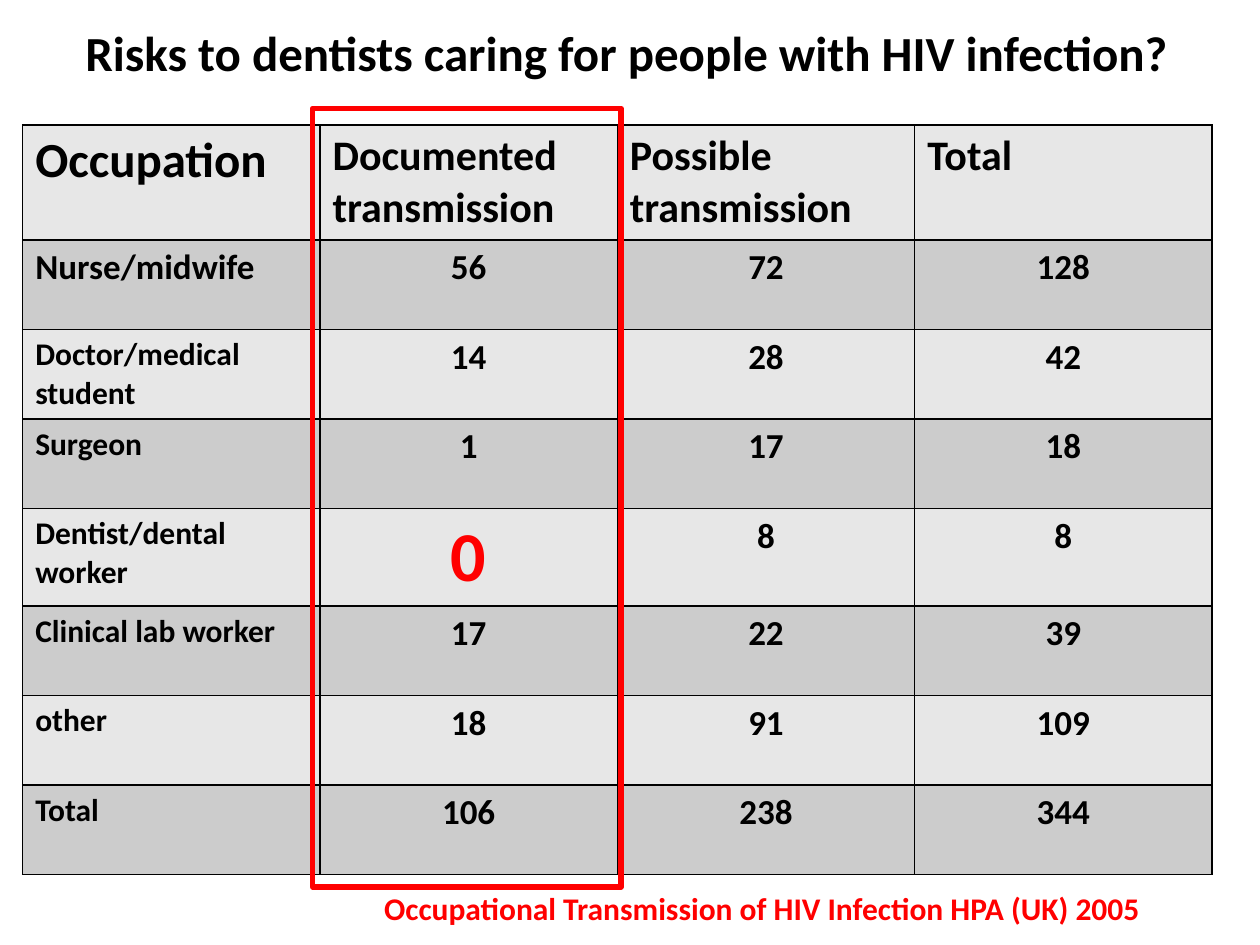
"""Build a slide tabulating occupational HIV transmission by occupation."""
import pptx
import pptx.dml.color
import pptx.enum.shapes
import pptx.enum.text
import pptx.oxml
import pptx.oxml.ns
import pptx.util
from pptx.util import Inches

TITLE = "Risks to dentists caring for people with HIV infection?"
SOURCE = "Occupational Transmission of HIV Infection HPA (UK) 2005"
HEADINGS = ["Occupation", "Documented transmission", "Possible transmission", "Total"]
COUNTS = [
    ("Nurse/midwife", 56, 72, 128),
    ("Doctor/medical student", 14, 28, 42),
    ("Surgeon", 1, 17, 18),
    ("Dentist/dental worker", 0, 8, 8),
    ("Clinical lab worker", 17, 22, 39),
    ("other", 18, 91, 109),
    ("Total", 106, 238, 344),
]
BANDS = ["E7E7E7", "CCCCCC"]
BLACK, RED = "000000", "FF0000"
COLUMN_WIDTH, ROW_HEIGHT = 2.36, 0.71
ALIGN = pptx.enum.text.PP_ALIGN


def rgb(value):
    """Turn a hex string into a colour."""
    return pptx.dml.color.RGBColor.from_string(value)


def write(frame, text, size, color=BLACK, align=ALIGN.LEFT):
    """Write one bold paragraph into a text frame."""
    frame.text = text
    paragraph = frame.paragraphs[0]
    paragraph.alignment = align
    font = paragraph.runs[0].font
    font.name, font.size, font.bold = "Calibri", pptx.util.Pt(size), True
    font.color.rgb = rgb(color)


def border(cell):
    """Rule all four sides of a cell with a thin black line."""
    properties = cell._tc.get_or_add_tcPr()
    for position, side in enumerate(("lnL", "lnR", "lnT", "lnB")):
        properties.insert(position, pptx.oxml.parse_xml(
            f'<a:{side} {pptx.oxml.ns.nsdecls("a")} w="12700"><a:solidFill>'
            f'<a:srgbClr val="{BLACK}"/></a:solidFill></a:{side}>'))


def cell_style(row, column, value):
    """Return the size, colour and alignment for a table value."""
    if row == 0:
        return (24 if column else 28), BLACK, ALIGN.LEFT
    if column == 0:
        return (20 if row == 1 else 18), BLACK, ALIGN.LEFT
    if value == 0:
        return 40, RED, ALIGN.CENTER
    return 20, BLACK, ALIGN.CENTER


def add_counts(slide):
    """Add the banded table of transmissions."""
    rows = [HEADINGS, *COUNTS]
    table = slide.shapes.add_table(
        len(rows), len(HEADINGS), Inches(0.18), Inches(0.99),
        Inches(COLUMN_WIDTH * len(HEADINGS)), Inches(ROW_HEIGHT * len(rows))).table
    for column in table.columns:
        column.width = Inches(COLUMN_WIDTH)
    for r, values in enumerate(rows):
        table.rows[r].height = Inches(ROW_HEIGHT)
        for c, value in enumerate(values):
            cell = table.cell(r, c)
            write(cell.text_frame, str(value), *cell_style(r, c, value))
            cell.fill.solid()
            cell.fill.fore_color.rgb = rgb(BANDS[r % 2])
            border(cell)


def main():
    """Assemble and save the slide."""
    deck = pptx.Presentation()
    deck.slide_width, deck.slide_height = Inches(10), Inches(7.5)
    slide = deck.slides.add_slide(deck.slide_layouts[5])

    title = slide.shapes.title
    title.left, title.top = Inches(0.05), Inches(0.03)
    title.width, title.height = Inches(9.84), Inches(0.77)
    write(title.text_frame, TITLE, 28, align=ALIGN.CENTER)
    title.text_frame.vertical_anchor = pptx.enum.text.MSO_ANCHOR.MIDDLE

    add_counts(slide)

    source = slide.shapes.add_textbox(Inches(2.95), Inches(7.01), Inches(6.76), Inches(0.4))
    source.text_frame.word_wrap = True
    write(source.text_frame, SOURCE, 18, RED)

    highlight = slide.shapes.add_shape(
        pptx.enum.shapes.MSO_SHAPE.RECTANGLE,
        Inches(2.48), Inches(0.86), Inches(2.45), Inches(6.18))
    highlight.shadow.inherit = False
    highlight.fill.background()
    highlight.line.color.rgb = rgb(RED)
    highlight.line.width = pptx.util.Pt(3)

    deck.save("out.pptx")


if __name__ == "__main__":
    main()
